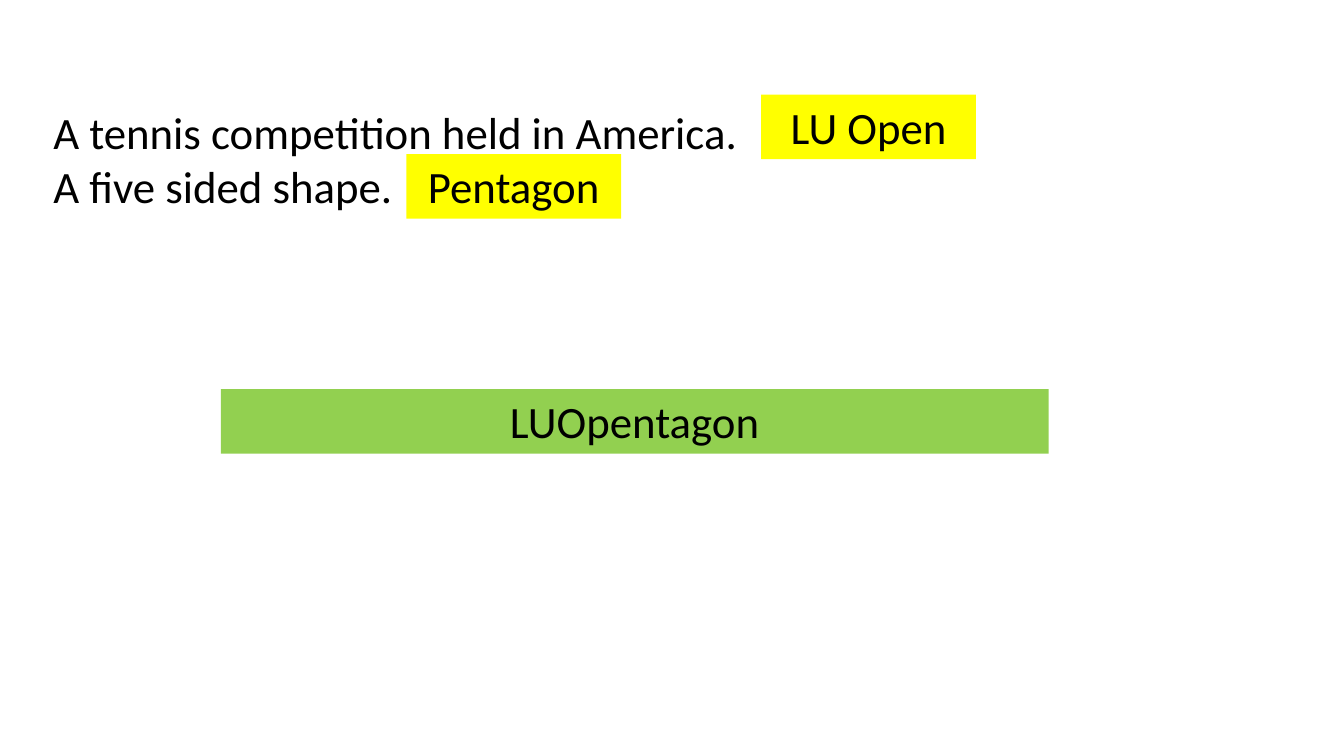
"""Build a word puzzle slide with two clues, their answers and the merged solution."""
import dataclasses

import pptx
import pptx.dml.color
import pptx.enum.shapes
import pptx.enum.text
import pptx.util


@dataclasses.dataclass(frozen=True)
class Theme:
    font: str = "Calibri"
    size: int = 32
    ink: str = "000000"
    answer: str = "FFFF00"
    solution: str = "92D050"


THEME = Theme()
SLIDE_WIDTH, SLIDE_HEIGHT = 13.33, 7.5
LABEL_HEIGHT = 8.53
ANSWER_WIDTH = 15.98

CLUES = ["A tennis competition held in America.", "A five sided shape."]
CLUE_AREA = (3.23, 13.2, 77.57, 15.73)
LABELS = [
    ("LU Open", 56.64, 12.53, ANSWER_WIDTH, THEME.answer),
    ("Pentagon", 30.23, 20.4, ANSWER_WIDTH, THEME.answer),
    ("LUOpentagon", 16.43, 51.47, 61.59, THEME.solution),
]


def color(code):
    return pptx.dml.color.RGBColor.from_string(code)


def place(left, top, width, height):
    across, down = SLIDE_WIDTH / 100, SLIDE_HEIGHT / 100
    lengths = (left * across, top * down, width * across, height * down)
    return [pptx.util.Inches(length) for length in lengths]


def write(box, lines, alignment):
    frame = box.text_frame
    frame.word_wrap = True
    frame.auto_size = pptx.enum.text.MSO_AUTO_SIZE.SHAPE_TO_FIT_TEXT
    frame.vertical_anchor = pptx.enum.text.MSO_ANCHOR.TOP
    for index, line in enumerate(lines):
        para = frame.add_paragraph() if index else frame.paragraphs[0]
        para.alignment = alignment
        span = para.add_run()
        span.text = line
        span.font.name = THEME.font
        span.font.size = pptx.util.Pt(THEME.size)
        span.font.color.rgb = color(THEME.ink)


def add_label(page, text, left, top, width, fill):
    box = page.shapes.add_shape(
        pptx.enum.shapes.MSO_SHAPE.RECTANGLE, *place(left, top, width, LABEL_HEIGHT)
    )
    box.shadow.inherit = False
    box.fill.solid()
    box.fill.fore_color.rgb = color(fill)
    box.line.fill.background()
    write(box, [text], pptx.enum.text.PP_ALIGN.CENTER)


def main():
    deck = pptx.Presentation()
    deck.slide_width = pptx.util.Inches(SLIDE_WIDTH)
    deck.slide_height = pptx.util.Inches(SLIDE_HEIGHT)
    page = deck.slides.add_slide(deck.slide_layouts[6])
    clue_box = page.shapes.add_textbox(*place(*CLUE_AREA))
    write(clue_box, CLUES, pptx.enum.text.PP_ALIGN.LEFT)
    for label in LABELS:
        add_label(page, *label)
    deck.save("out.pptx")


if __name__ == "__main__":
    main()
